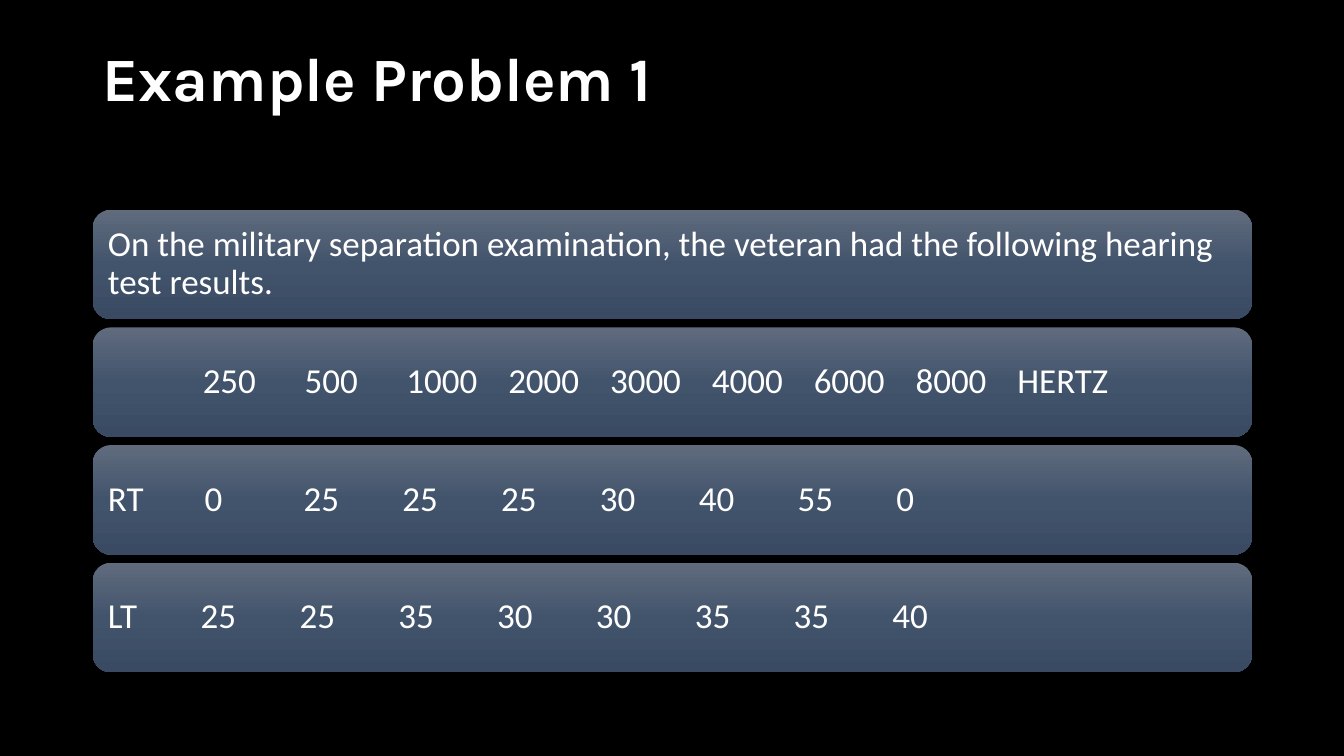
from copy import deepcopy

from lxml import etree
from pptx import Presentation
from pptx.dml.color import RGBColor
from pptx.enum import shapes, text
from pptx.oxml.ns import qn
from pptx.util import Inches, Pt

WHITE = "FFFFFF"
SHADES = [(0, "606B7D"), (0.5, "42546C"), (1, "394A62")]

# Each row: its cells, then the first tab stop and the tab step in inches
ROWS = [
    (["On the military separation examination, the veteran had "
      "the following hearing test results."], 0, 0),
    (["", "250", "500", "1000", "2000", "3000", "4000", "6000", "8000",
      "HERTZ"], 0.94, 1.01),
    (["RT", "0", "25", "25", "25", "30", "40", "55", "0"], 0.96, 0.98),
    (["LT", "25", "25", "35", "30", "30", "35", "35", "40"], 0.92, 0.98),
]


def color(code):
    return RGBColor.from_string(code)


def style(para, font, size, bold=False):
    para.alignment = text.PP_ALIGN.LEFT
    para.line_spacing = 0.9
    for run in para.runs:
        run.font.name = font
        run.font.size = Pt(size)
        run.font.bold = bold
        run.font.color.rgb = color(WHITE)


def shade(shape):
    """Fill the shape with a three-stop gradient from top to bottom."""
    fill = shape.fill
    fill.gradient()
    fill.gradient_angle = 270
    first = shape._element.spPr.find(".//" + qn("a:gs"))
    first.addnext(deepcopy(first))
    for stop, (place, code) in zip(fill.gradient_stops, SHADES):
        stop.position = place
        stop.color.rgb = color(code)


def set_tabs(para, count, start, step):
    tabs = etree.SubElement(para._p.get_or_add_pPr(), qn("a:tabLst"))
    for i in range(count):
        etree.SubElement(tabs, qn("a:tab"),
                         pos=str(Inches(start + i * step)), algn="l")


def add_title(slide, left, top, width, height):
    box = slide.shapes.add_textbox(
        Inches(left), Inches(top), Inches(width), Inches(height))
    frame = box.text_frame
    frame.word_wrap = True
    frame.vertical_anchor = text.MSO_ANCHOR.TOP
    frame.margin_top = Inches(0.08)
    frame.text = "Example Problem 1"
    style(frame.paragraphs[0], "Karla", 44, True)


def add_bar(slide, left, top, width, height, cells, start, step):
    bar = slide.shapes.add_shape(
        shapes.MSO_SHAPE.ROUNDED_RECTANGLE,
        Inches(left), Inches(top), Inches(width), Inches(height))
    bar.shadow.inherit = False
    bar.line.fill.background()
    shade(bar)
    frame = bar.text_frame
    frame.word_wrap = True
    frame.vertical_anchor = text.MSO_ANCHOR.MIDDLE
    frame.margin_left = frame.margin_right = Inches(0.1)
    frame.margin_top = frame.margin_bottom = Inches(0.1)
    frame.text = "\t".join(cells)
    para = frame.paragraphs[0]
    style(para, "Calibri", 25)
    if len(cells) > 1:
        set_tabs(para, len(cells) - 1, start, step)


def add_results(slide, left, top, width, height):
    gap = 0.08
    tall = (height - gap * (len(ROWS) - 1)) / len(ROWS)
    for i, (cells, start, step) in enumerate(ROWS):
        add_bar(slide, left, top + i * (tall + gap), width, tall,
                cells, start, step)


def main():
    deck = Presentation()
    deck.slide_width = Inches(13.33)
    deck.slide_height = Inches(7.5)
    slide = deck.slides.add_slide(deck.slide_layouts[6])

    # Background
    back = slide.background.fill
    back.solid()
    back.fore_color.rgb = color("000000")

    # Title and hearing test rows
    add_title(slide, 0.92, 0.4, 11.5, 1.45)
    add_results(slide, 0.92, 2.08, 11.5, 4.59)

    deck.save("out.pptx")


if __name__ == "__main__":
    main()
